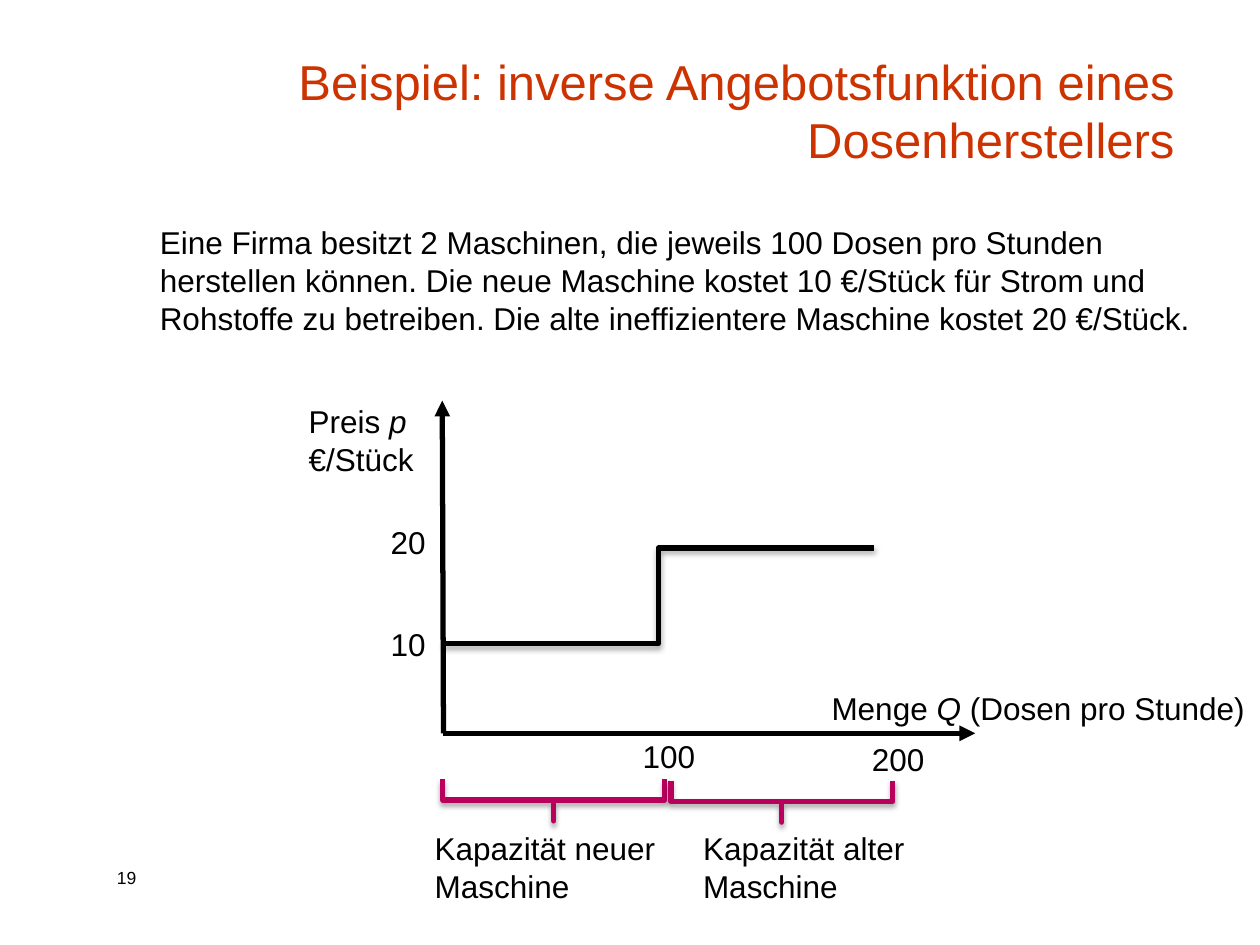
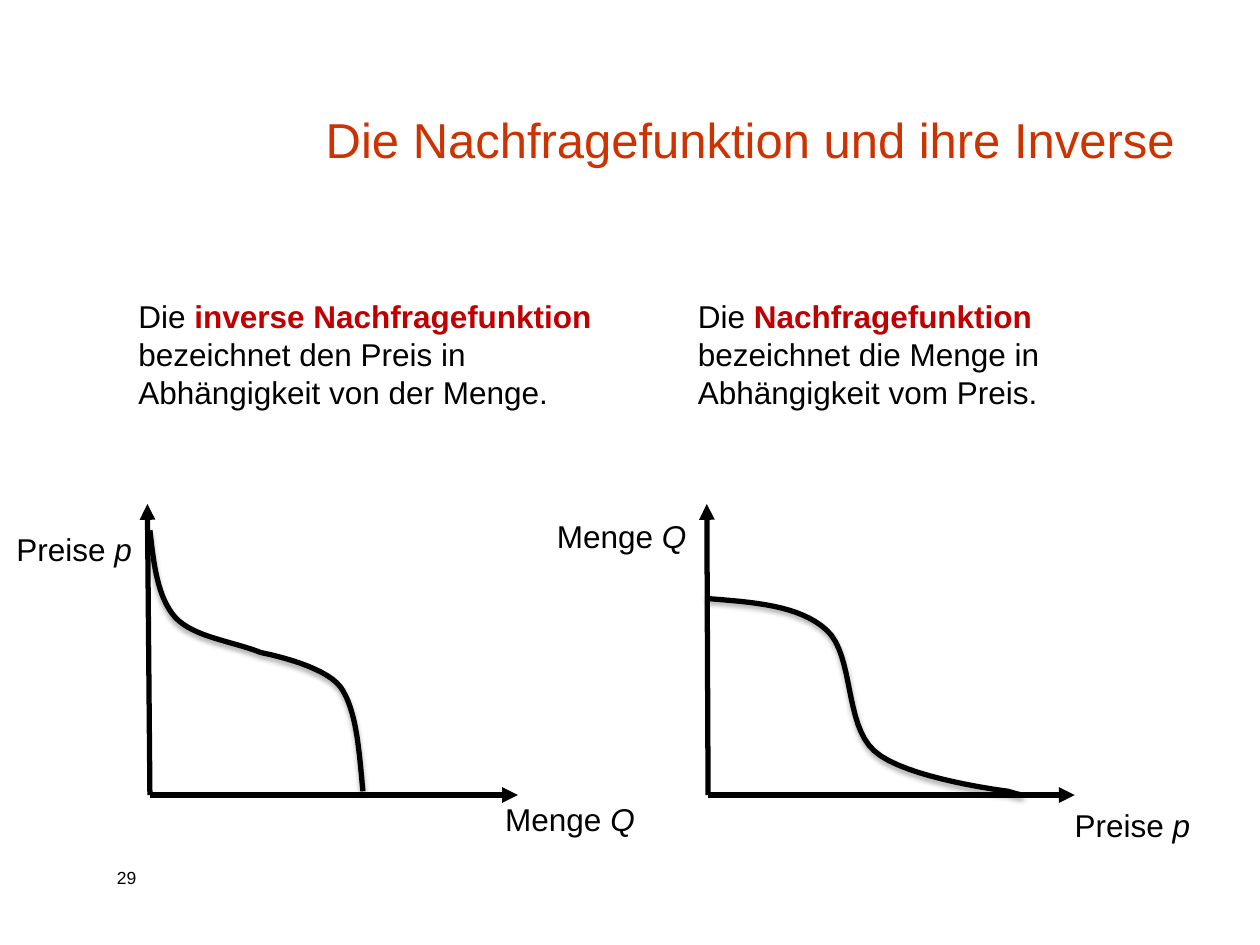
from dataclasses import dataclass
from typing import Any, NamedTuple

from lxml.etree import SubElement
from pptx import Presentation
from pptx.dml.color import RGBColor
from pptx.enum.shapes import MSO_CONNECTOR, MSO_SHAPE
from pptx.enum.text import MSO_ANCHOR, MSO_AUTO_SIZE, PP_ALIGN
from pptx.oxml.ns import qn
from pptx.util import Emu, Inches, Pt

# Grid: 100 columns by 75 rows
WIDTH, HEIGHT = Inches(10), Inches(7.5)
COLS, ROWS = 100, 75

COLORS = {"text": "000000", "title": "CC3300", "key": "C00000", "brace": "B9005C"}
RUN_STYLES = {
    "plain": {},
    "italic": {"italic": True},
    "key": {"bold": True},
}
TITLE_FRAME = {
    "word_wrap": True, "auto_size": MSO_AUTO_SIZE.NONE,
    "vertical_anchor": MSO_ANCHOR.BOTTOM,
}
LINE_WIDTH = Pt(3)
CURVE_STEPS = 16


class Pos(NamedTuple):
    x: float
    y: float


class Box(NamedTuple):
    x: float
    y: float
    w: float
    h: float


class Run(NamedTuple):
    text: str
    style: str = "plain"


@dataclass
class Label:
    box: Box
    lines: list[list[Run]]
    padded: bool = False
    size: int = 18


@dataclass
class Axes:
    origin: Pos
    right: float
    top: Pos


@dataclass
class Curve:
    start: Pos
    segments: list[tuple[Pos, Pos, Pos]]


def col(n: float) -> Emu:
    return Emu(round(WIDTH * n / COLS))


def row(n: float) -> Emu:
    return Emu(round(HEIGHT * n / ROWS))


def place(box: Box) -> tuple[Emu, Emu, Emu, Emu]:
    return col(box.x), row(box.y), col(box.w), row(box.h)


def apply(obj: Any, values: dict[str, Any]) -> None:
    for name, value in values.items():
        setattr(obj, name, value)


def color(name: str) -> RGBColor:
    return RGBColor.from_string(COLORS[name])


def set_font(font: Any, size: int, color_name: str, style: str = "plain") -> None:
    apply(font, {"name": "Arial", "size": Pt(size)} | RUN_STYLES[style])
    font.color.rgb = color(color_name)


def set_line(sp: Any, color_name: str = "text", shadow: bool = False,
             arrow: bool = False) -> None:
    sp.line.color.rgb = color(color_name)
    sp.line.width = LINE_WIDTH
    props = sp._element.spPr
    if arrow:
        SubElement(props.find(qn("a:ln")), qn("a:tailEnd"), type="triangle")
    effects = SubElement(props, qn("a:effectLst"))
    if shadow:
        outer = SubElement(effects, qn("a:outerShdw"), blurRad=str(Pt(3.1)),
                           dist=str(Pt(1.8)), dir="5400000", rotWithShape="0")
        black = SubElement(outer, qn("a:srgbClr"), val=COLORS["text"])
        SubElement(black, qn("a:alpha"), val="35000")


def add_label(slide: Any, label: Label) -> None:
    tf = slide.shapes.add_textbox(*place(label.box)).text_frame
    tf.word_wrap = True
    if not label.padded:
        sides = ("left", "top", "right", "bottom")
        apply(tf, {f"margin_{side}": 0 for side in sides})
    for i, runs in enumerate(label.lines):
        p = tf.paragraphs[0] if i == 0 else tf.add_paragraph()
        for text, style in runs:
            r = p.add_run()
            r.text = text
            set_font(r.font, label.size, "key" if style == "key" else "text", style)


def add_link(slide: Any, kind: Any, start: Pos, end: Pos, **line: Any) -> None:
    sp = slide.shapes.add_connector(kind, col(start.x), row(start.y),
                                    col(end.x), row(end.y))
    set_line(sp, **line)


def add_axes(slide: Any, axes: Axes) -> None:
    for tip in (Pos(axes.right, axes.origin.y), axes.top):
        add_link(slide, MSO_CONNECTOR.STRAIGHT, axes.origin, tip, arrow=True)


def add_brace(slide: Any, box: Box) -> None:
    sp = slide.shapes.add_shape(MSO_SHAPE.LEFT_BRACE, *place(box))
    sp.rotation = 270
    sp.adjustments[0] = 0
    sp.fill.background()
    set_line(sp, "brace", shadow=True)


def bezier(a: Pos, b: Pos, c: Pos, d: Pos, t: float) -> Pos:
    u = 1 - t
    weights = (u**3, 3 * u * u * t, 3 * u * t * t, t**3)
    return Pos(*(sum(w * v for w, v in zip(weights, axis)) for axis in zip(a, b, c, d)))


def add_curve(slide: Any, curve: Curve) -> None:
    points, start = [], curve.start
    for segment in curve.segments:
        points += [bezier(start, *segment, i / CURVE_STEPS)
                   for i in range(1, CURVE_STEPS + 1)]
        start = segment[-1]
    outline = slide.shapes.build_freeform(col(curve.start.x), row(curve.start.y))
    outline.add_line_segments([(col(p.x), row(p.y)) for p in points], close=False)
    sp = outline.convert_to_shape()
    sp.fill.background()
    set_line(sp, shadow=True)


def add_slide(prs: Any, title: str, number: int) -> Any:
    slide = prs.slides.add_slide(prs.slide_layouts[5])
    sp = slide.shapes.title
    apply(sp, dict(zip(("left", "top", "width", "height"),
                       place(Box(20.9, 4.2, 73.3, 9.7)))))
    tf = sp.text_frame
    tf.text = title
    apply(tf, TITLE_FRAME)
    p = tf.paragraphs[0]
    p.alignment = PP_ALIGN.RIGHT
    set_font(p.runs[0].font, 28, "title")
    add_label(slide, Label(Box(8.3, 68.3, 6.7, 2.7), [[Run(str(number))]], True, 10))
    return slide


def quantity(x: float, y: float) -> Label:
    return Label(Box(x, y, 11.1, 3), [[Run("Menge"), Run(" Q", "italic")]])


def price(x: float, y: float) -> Label:
    return Label(Box(x, y, 13, 3), [[Run("Preise"), Run(" p", "italic")]])


def build_supply(prs: Any) -> None:
    slide = add_slide(
        prs, "Beispiel: inverse Angebotsfunktion eines Dosenherstellers", 19)
    add_axes(slide, Axes(Pos(35.2, 58.2), 77.4, Pos(35.1, 31.8)))
    add_link(slide, MSO_CONNECTOR.ELBOW, Pos(35.1, 51.1), Pos(69.4, 43.5), shadow=True)

    # Capacity of each machine
    for x, y in ((42.3, 54.7), (60.4, 54.8)):
        add_brace(slide, Box(x, y, 3.3, 17.6))
    for x, w, machine in ((34.5, 17.8, "neuer"), (55.8, 16.5, "alter")):
        add_label(slide, Label(Box(x, 65.8, w, 6.1),
                               [[Run(f"Kapazität {machine} Maschine")]]))

    # Axis values
    for x, y, value in ((31, 41.5, 20), (31, 49.6, 10), (51, 58.5, 100), (69.2, 58.7, 200)):
        add_label(slide, Label(Box(x, y, 13, 3), [[Run(str(value))]]))

    # Explanation and axis titles
    add_label(slide, Label(Box(11.7, 17.2, 85.3, 10.1), [[Run(
        "Eine Firma besitzt 2 Maschinen, die jeweils 100 Dosen pro Stunden "
        "herstellen können. Die neue Maschine kostet 10 €/Stück für Strom und "
        "Rohstoffe zu betreiben. Die alte ineffizientere Maschine kostet "
        "20 €/Stück.")]], padded=True))
    add_label(slide, Label(Box(24.5, 31.9, 13, 6.1),
                           [[Run("Preis"), Run(" p", "italic")], [Run("€/Stück")]]))
    add_label(slide, Label(Box(66, 54.7, 34, 3), [
        [Run("Menge"), Run(" Q ", "italic"), Run("(Dosen pro Stunde)")]]))


def build_demand(prs: Any) -> None:
    slide = add_slide(prs, "Die Nachfragefunktion und ihre Inverse", 29)

    # Definitions
    for x, w, term, rest in (
        (10, 38.4, "inverse Nachfragefunktion",
         " bezeichnet den Preis in Abhängigkeit von der Menge."),
        (54.4, 37.5, "Nachfragefunktion",
         " bezeichnet die Menge in Abhängigkeit vom Preis."),
    ):
        add_label(slide, Label(Box(x, 23.1, w, 10.1),
                               [[Run("Die "), Run(term, "key"), Run(rest)]], padded=True))

    # Axes with their titles
    for axes in (Axes(Pos(11.9, 63.1), 41.1, Pos(11.7, 40)),
                 Axes(Pos(56.2, 63.1), 85.3, Pos(56.1, 40))):
        add_axes(slide, axes)
    for label in (price(1.3, 42.1), quantity(40.1, 63.5),
                  quantity(44.2, 41), price(85.3, 64)):
        add_label(slide, label)

    # Inverse demand, then demand
    add_curve(slide, Curve(Pos(28.8, 62.8), [
        (Pos(28.5, 59.6), Pos(28.3, 56.3), Pos(27, 54.5)),
        (Pos(25.6, 52.7), Pos(20.7, 51.8), Pos(20.7, 51.8)),
        (Pos(18.5, 50.9), Pos(15.4, 50.6), Pos(13.9, 49)),
        (Pos(12.5, 47.4), Pos(12.2, 44.8), Pos(11.9, 42.1)),
    ]))
    add_curve(slide, Curve(Pos(56.1, 47.5), [
        (Pos(59.7, 47.8), Pos(63.4, 48), Pos(65.6, 50)),
        (Pos(67.8, 52), Pos(67, 57.5), Pos(69.4, 59.6)),
        (Pos(71.8, 61.8), Pos(80, 62.8), Pos(80, 62.8)),
        (Pos(81.7, 63.3), Pos(80.8, 63), Pos(79.9, 62.8)),
    ]))


def main() -> None:
    prs = Presentation()
    apply(prs, {"slide_width": WIDTH, "slide_height": HEIGHT})
    build_supply(prs)
    build_demand(prs)
    prs.save("out.pptx")


if __name__ == "__main__":
    main()
